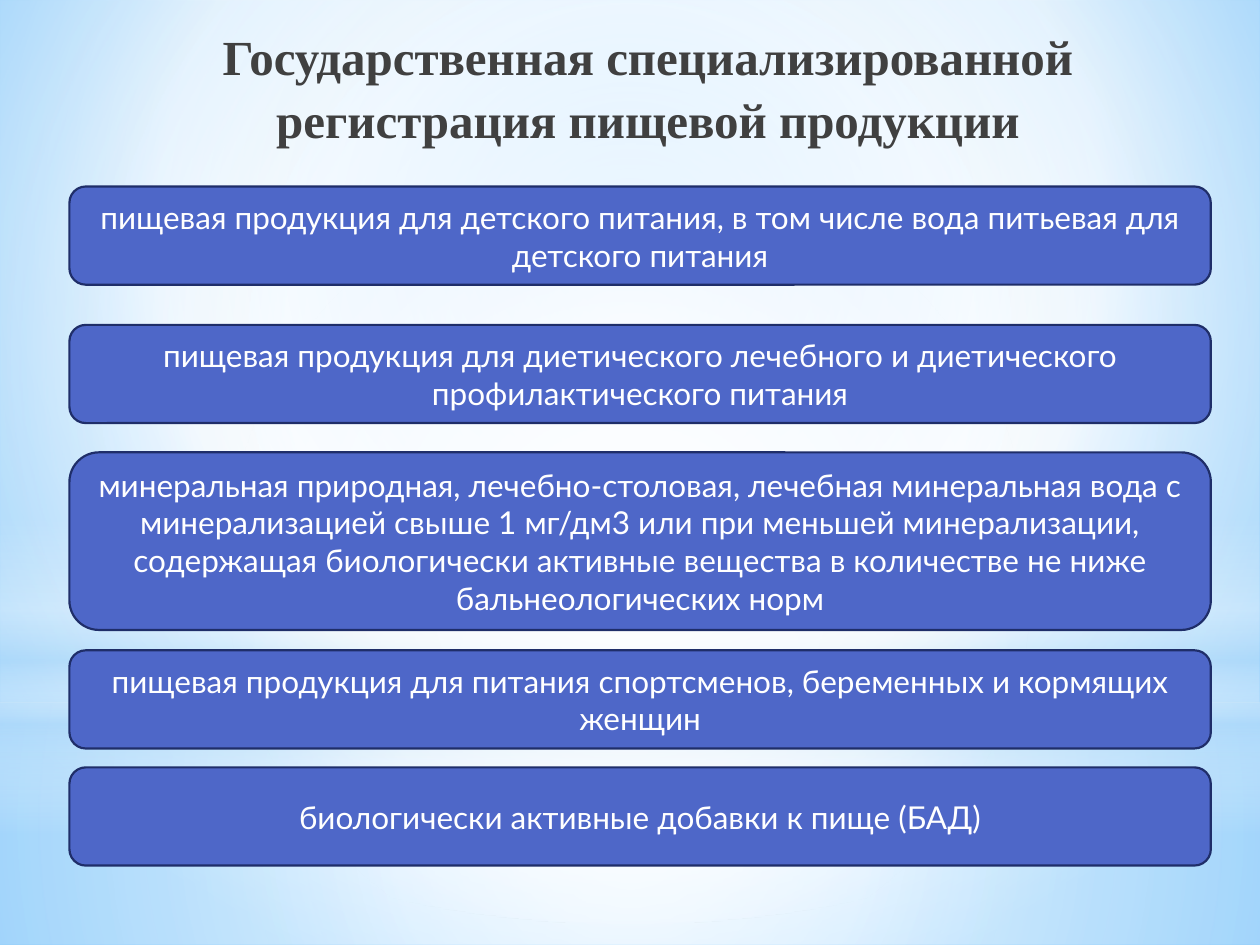
from dataclasses import dataclass

from lxml.etree import SubElement
from pptx import Presentation
from pptx.dml.color import RGBColor
from pptx.enum.shapes import MSO_SHAPE
from pptx.enum.text import MSO_ANCHOR, MSO_AUTO_SIZE, PP_ALIGN
from pptx.oxml.ns import qn
from pptx.util import Cm, Pt


@dataclass(frozen=True)
class Theme:
    white: str = "FFFFFF"
    sky: str = "B4DCFA"
    sky_mid: str = "9ED5FF"
    sky_deep: str = "5BB9FF"
    title: str = "404040"
    card: str = "4E67C8"
    card_line: str = "1F2E69"
    title_font: str = "Times New Roman"
    card_font: str = "Lato"
    title_size: int = 28
    card_size: int = 18
    line_width: float = 1.25


THEME = Theme()
CENTRE = (50, 50, 50, 50)
CARD_HEIGHT = 1.98

# Top of each card, its height and its text, in cm
CARDS = [
    (3.76, CARD_HEIGHT, "пищевая продукция для детского питания, в том числе вода "
                        "питьевая для детского питания"),
    (6.55, CARD_HEIGHT, "пищевая продукция для диетического лечебного и диетического "
                        "профилактического питания"),
    (9.12, 3.58, "минеральная природная, лечебно-столовая, лечебная минеральная вода с "
                 "минерализацией свыше 1 мг/дм3 или при меньшей минерализации, содержащая "
                 "биологически активные вещества в количестве не ниже бальнеологических норм"),
    (13.11, CARD_HEIGHT, "пищевая продукция для питания спортсменов, беременных и "
                         "кормящих женщин"),
    (15.47, CARD_HEIGHT, "биологически активные добавки к пище (БАД)"),
]


def set_gradient(fill, props, stops, focus=None):
    """Fill with (position, colour, opacity) stops: radial to focus, or top to bottom."""
    fill.gradient()
    grad = props.find(qn("a:gradFill"))
    for child in list(grad):
        grad.remove(child)
    gs_list = SubElement(grad, qn("a:gsLst"))
    for pos, color, opacity in stops:
        gs = SubElement(gs_list, qn("a:gs"), pos=str(pos * 1000))
        clr = SubElement(gs, qn("a:srgbClr"), val=color)
        if opacity < 100:
            SubElement(clr, qn("a:alpha"), val=str(opacity * 1000))
    if focus:
        path = SubElement(grad, qn("a:path"), path="circle")
        sides = {side: str(v * 1000) for side, v in zip("ltrb", focus)}
        SubElement(path, qn("a:fillToRect"), **sides)
    else:
        SubElement(grad, qn("a:lin"), ang="5400000", scaled="0")


def add_backdrop(s, width):
    """Radial sky with translucent bands and a central glow."""
    t = THEME
    fill = s.background.fill
    fill.gradient()
    set_gradient(fill, s.element.find(".//" + qn("p:bgPr")),
                 [(0, t.sky_mid, 100), (60, t.white, 100), (100, t.sky_deep, 100)],
                 (20, 10, 20, 60))
    rect, oval = MSO_SHAPE.RECTANGLE, MSO_SHAPE.OVAL
    layers = [
        (rect, 14.17, 4.88, CENTRE,
         [(0, t.white, 91), (37, t.white, 76), (100, t.sky, 79)]),
        (rect, 0, 14.17, CENTRE,
         [(0, t.white, 89), (48, t.white, 62), (100, t.sky, 79)]),
        (rect, 10.46, 6.35, None,
         [(0, t.white, 0), (29, t.white, 30), (45, t.sky, 40),
          (55, t.white, 26), (65, t.sky, 60), (100, t.white, 0)]),
        (oval, 4.45, 14.17, CENTRE, [(0, t.white, 100), (56, t.white, 0)]),
    ]
    for kind, top, height, focus, stops in layers:
        sp = s.shapes.add_shape(kind, 0, Cm(top), width, Cm(height))
        sp.shadow.inherit = False
        sp.line.fill.background()
        set_gradient(sp.fill, sp.element.spPr, stops, focus)


def format_text(p, font, size, color, bold=False):
    p.alignment = PP_ALIGN.CENTER
    for r in p.runs:
        r.font.name, r.font.size, r.font.bold = font, Pt(size), bold
        r.font.color.rgb = RGBColor.from_string(color)


def place_title(s, text, left, top, width, height):
    sp = s.shapes.title
    sp.left, sp.top, sp.width, sp.height = Cm(left), Cm(top), Cm(width), Cm(height)
    s.shapes.element.append(sp.element)  # bring in front of the backdrop
    tf = sp.text_frame
    tf.text = text
    tf.word_wrap = True
    tf.auto_size = MSO_AUTO_SIZE.NONE
    tf.vertical_anchor = MSO_ANCHOR.MIDDLE
    p = tf.paragraphs[0]
    p.line_spacing = 1.06
    format_text(p, THEME.title_font, THEME.title_size, THEME.title, bold=True)
    p_pr = p._p.get_or_add_pPr()
    p_pr.set("marL", str(Cm(0.51)))
    p_pr.set("indent", "0")


def add_card(s, text, left, top, width, height):
    sp = s.shapes.add_shape(MSO_SHAPE.ROUNDED_RECTANGLE,
                            Cm(left), Cm(top), Cm(width), Cm(height))
    sp.shadow.inherit = False
    sp.fill.solid()
    sp.fill.fore_color.rgb = RGBColor.from_string(THEME.card)
    sp.line.color.rgb = RGBColor.from_string(THEME.card_line)
    sp.line.width = Pt(THEME.line_width)
    tf = sp.text_frame
    tf.text = text
    tf.word_wrap = True
    tf.vertical_anchor = MSO_ANCHOR.MIDDLE
    format_text(tf.paragraphs[0], THEME.card_font, THEME.card_size, THEME.white)


def main():
    prs = Presentation()
    prs.slide_width, prs.slide_height = Cm(25.4), Cm(19.05)
    s = prs.slides.add_slide(prs.slide_layouts[5])
    add_backdrop(s, prs.slide_width)
    place_title(s, "Государственная специализированной регистрация пищевой продукции",
                1.3, 0.33, 23.01, 2.79)
    for top, height, text in CARDS:
        add_card(s, text, 1.4, top, 23.01, height)
    prs.save("out.pptx")


if __name__ == "__main__":
    main()
